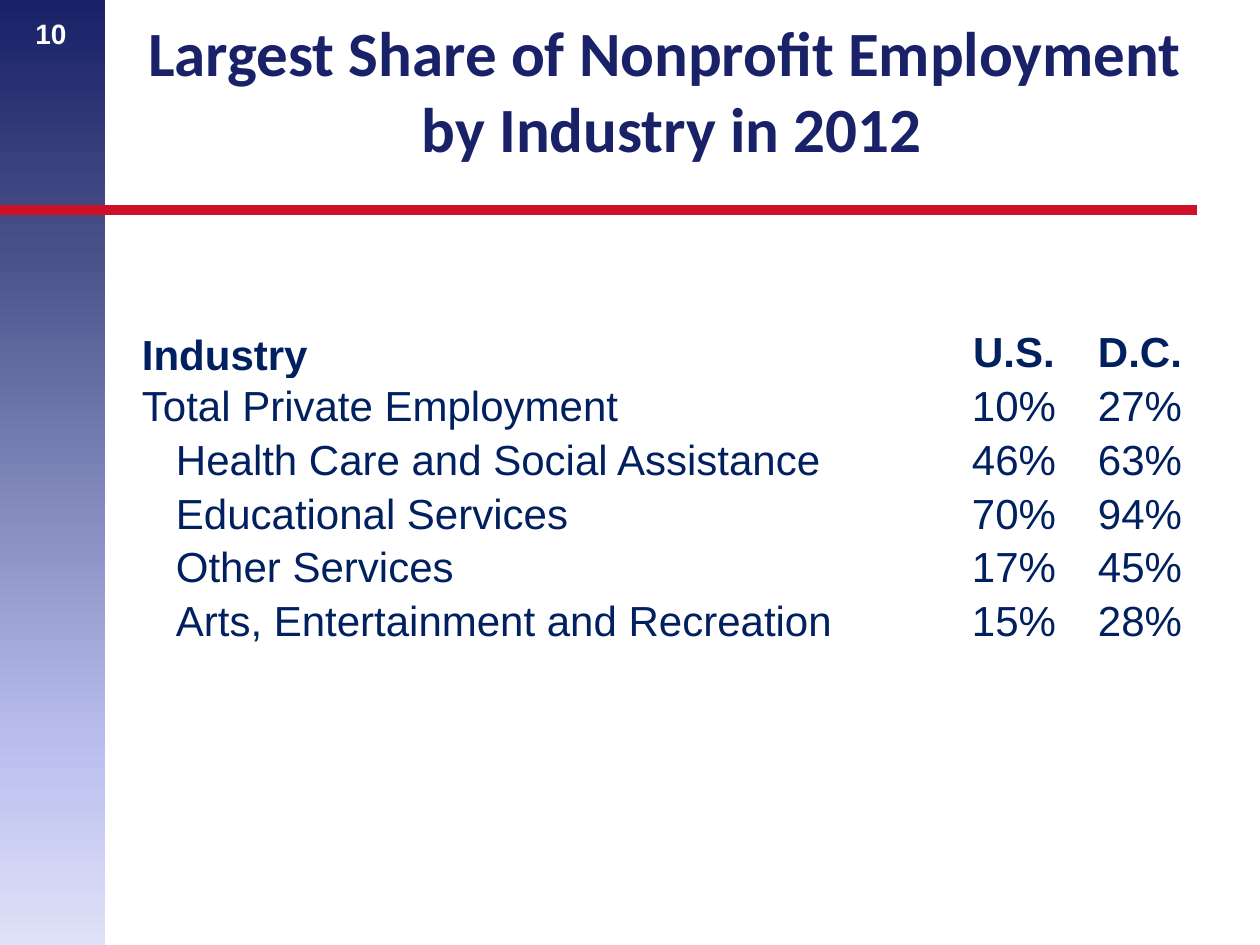
from dataclasses import dataclass

import lxml.etree
import pptx
import pptx.dml.color
import pptx.enum.shapes
import pptx.enum.text
import pptx.oxml.ns
import pptx.util

ALIGN = pptx.enum.text.PP_ALIGN
ANCHOR = pptx.enum.text.MSO_ANCHOR
qn = pptx.oxml.ns.qn


@dataclass(frozen=True)
class Theme:
    navy: str = "192168"
    table_ink: str = "002060"
    red: str = "CE1126"
    white: str = "FFFFFF"
    sidebar: tuple = ((0, "192168"), (26, "495088"), (78, "B8BDEE"), (100, "DFE1F7"))
    title_font: str = "Calibri"
    body_font: str = "Arial"
    title_size: int = 36
    table_size: int = 24
    number_size: int = 16


def px(length):
    return pptx.util.Emu(round(length * 914400 / 126))


def rgb(value):
    return pptx.dml.color.RGBColor.from_string(value)


class SlideBuilder:
    """Draw styled elements on the current slide."""

    def __init__(self, slide, theme):
        self.slide = slide
        self.theme = theme

    def add_span(self, para, text, font, size, color, bold=False, align=ALIGN.LEFT):
        para.alignment = align
        span = para.add_run()
        span.text = text
        span.font.name = font
        span.font.size = pptx.util.Pt(size)
        span.font.bold = bold
        span.font.color.rgb = rgb(color)

    def gradient_bar(self, left, top, width, height, stops):
        bar = self.slide.shapes.add_shape(
            pptx.enum.shapes.MSO_SHAPE.RECTANGLE, px(left), px(top), px(width), px(height))
        bar.shadow.inherit = False
        bar.line.fill.background()
        bar.fill.gradient()
        bar.fill.gradient_angle = 270
        stop_list = next(bar.element.iter(qn("a:gsLst")))
        for stop in list(stop_list):
            stop_list.remove(stop)
        for percent, color in stops:
            stop = lxml.etree.SubElement(stop_list, qn("a:gs"), pos=str(percent * 1000))
            lxml.etree.SubElement(stop, qn("a:srgbClr"), val=color)

    def rule(self, left, top, right, color, weight):
        line = self.slide.shapes.add_connector(
            pptx.enum.shapes.MSO_CONNECTOR.STRAIGHT, px(left), px(top), px(right), px(top))
        line.line.color.rgb = rgb(color)
        line.line.width = pptx.util.Pt(weight)
        lxml.etree.SubElement(line.element.spPr, qn("a:effectLst"))

    def text(self, left, top, width, height, lines, anchor=ANCHOR.TOP, **style):
        box = self.slide.shapes.add_textbox(px(left), px(top), px(width), px(height))
        frame = box.text_frame
        frame.word_wrap = True
        frame.vertical_anchor = anchor
        for index, line in enumerate(lines):
            para = frame.add_paragraph() if index else frame.paragraphs[0]
            self.add_span(para, line, **style)

    def table(self, left, top, widths, row_height, rows, indent, indent_from):
        table = self.slide.shapes.add_table(
            len(rows), len(widths), px(left), px(top),
            px(sum(widths)), px(row_height * len(rows))).table
        table.first_row = False
        table.horz_banding = False
        for column, width in zip(table.columns, widths):
            column.width = px(width)
        for r, values in enumerate(rows):
            table.rows[r].height = px(row_height)
            for c, value in enumerate(values):
                cell = table.cell(r, c)
                cell.fill.background()
                cell.margin_left = px(indent if c == 0 and r >= indent_from else 1)
                cell.margin_top = cell.margin_right = px(1)
                cell.margin_bottom = 0
                cell.vertical_anchor = ANCHOR.BOTTOM if r == c == 0 else ANCHOR.MIDDLE
                self.add_span(cell.text_frame.paragraphs[0], value, self.theme.body_font,
                              self.theme.table_size, self.theme.table_ink, bold=r == 0,
                              align=ALIGN.CENTER if c else ALIGN.LEFT)


def main():
    theme = Theme()
    deck = pptx.Presentation()
    deck.slide_width, deck.slide_height = px(1260), px(945)
    page = SlideBuilder(deck.slides.add_slide(deck.slide_layouts[6]), theme)

    page.gradient_bar(0, 0, 105, 945, theme.sidebar)
    page.rule(0, 210, 1197, theme.red, 6)
    page.text(105, 21, 1134, 150,
              ["Largest Share of Nonprofit Employment ", "by Industry in 2012"],
              anchor=ANCHOR.BOTTOM, font=theme.title_font, size=theme.title_size,
              color=theme.navy, bold=True, align=ALIGN.CENTER)
    page.text(23, 10, 62, 47, ["10"], font=theme.body_font, size=theme.number_size,
              color=theme.white, bold=True)
    page.table(141, 325, (810, 126, 126), 54, [
        ("Industry", "U.S.", "D.C."),
        ("Total Private Employment", "10%", "27%"),
        ("Health Care and Social Assistance", "46%", "63%"),
        ("Educational Services", "70%", "94%"),
        ("Other Services", "17%", "45%"),
        ("Arts, Entertainment and Recreation", "15%", "28%"),
    ], indent=35, indent_from=2)
    deck.save("out.pptx")


if __name__ == "__main__":
    main()
